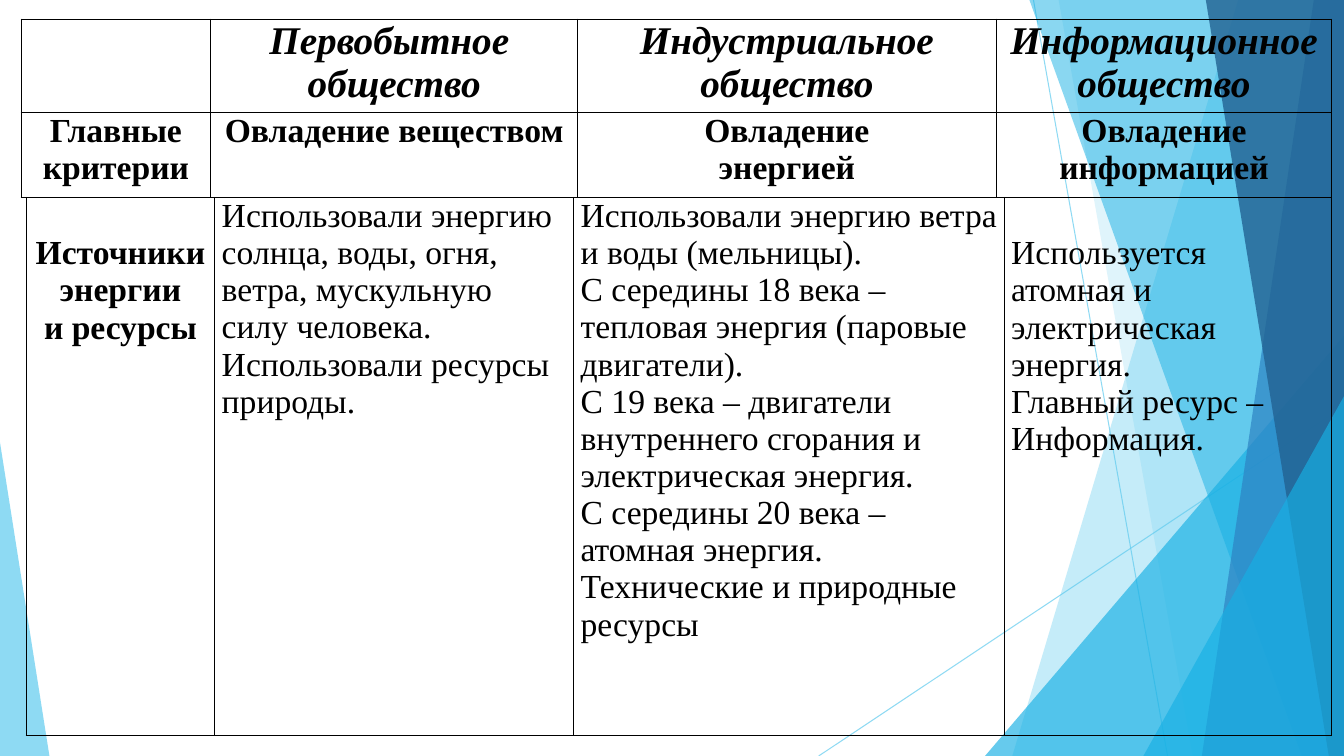
from lxml.etree import SubElement
from pptx import Presentation
from pptx.dml.color import RGBColor
from pptx.enum.shapes import MSO_CONNECTOR as Connector, MSO_SHAPE as Shape
from pptx.enum.text import PP_ALIGN as Align
from pptx.oxml.ns import qn
from pptx.util import Pt

PX = 9144
SLIDE_W, SLIDE_H = 1333, 750
FONT = "Times New Roman"
SKY, AZURE, BLUE, NAVY, BLACK = "5FCBEF", "17B0E4", "2E83C3", "226292", "000000"

SOCIETIES = [
    [],
    ["Первобытное ", "общество"],
    ["Индустриальное", "общество"],
    ["Информационное", "общество"],
]
CRITERIA = [
    ["Главные критерии"],
    ["Овладение веществом"],
    ["Овладение", "энергией"],
    ["Овладение", "информацией"],
]
RESOURCES_TITLE = ["Источники энергии", "и ресурсы"]
PRIMITIVE = [
    "Использовали энергию солнца, воды, огня, ветра, мускульную силу человека.",
    "Использовали ресурсы природы.",
]
INDUSTRIAL = [
    "Использовали энергию ветра и воды (мельницы).",
    "С середины 18 века – тепловая энергия (паровые двигатели).",
    "С 19 века – двигатели внутреннего сгорания и электрическая энергия.",
    "С середины 20 века – атомная энергия.",
    "Технические и природные ресурсы",
]
INFORMATION = [
    "Используется атомная и электрическая энергия.",
    "Главный ресурс –",
    "Информация.",
]
TEXT_LINE = 37


def px(length):
    return length * PX


def paint(color_format, color, opacity=100):
    color_format.rgb = RGBColor.from_string(color)
    if opacity < 100:
        clr = color_format._xFill.find(qn("a:srgbClr"))
        SubElement(clr, qn("a:alpha"), val=str(opacity * 1000))


def fill_facet(facet, color, opacity):
    facet.shadow.inherit = False
    facet.line.fill.background()
    facet.fill.solid()
    facet.fill.fore_color.rgb = RGBColor.from_string(color)
    clr = facet._element.spPr.find(qn("a:solidFill")).find(qn("a:srgbClr"))
    SubElement(clr, qn("a:alpha"), val=str(opacity * 1000))


def add_ray(slide, x1, y1, x2, y2):
    ray = slide.shapes.add_connector(
        Connector.STRAIGHT, px(x1), px(y1), px(x2), px(y2))
    ray.line.width = Pt(0.75)
    ray.line.color.rgb = RGBColor.from_string(SKY)
    props = ray._element.spPr
    clr = next(props.iter(qn("a:srgbClr")))
    SubElement(clr, qn("a:alpha"), val="70000")
    SubElement(props, qn("a:effectLst"))


def add_band(slide, top_x, bottom_x, color, opacity):
    outline = slide.shapes.build_freeform(top_x, 0, scale=PX)
    outline.add_line_segments(
        [(SLIDE_W, 0), (SLIDE_W, SLIDE_H), (bottom_x, SLIDE_H)], close=True)
    fill_facet(outline.convert_to_shape(), color, opacity)


def add_corner(slide, x, y, width, apex, color, opacity):
    corner = slide.shapes.add_shape(
        Shape.ISOSCELES_TRIANGLE, px(x), px(y), px(width), px(SLIDE_H - y))
    corner.adjustments[0] = apex
    fill_facet(corner, color, opacity)


def add_grid(slide, x, y, widths, heights):
    grid = slide.shapes.add_table(
        len(heights), len(widths), px(x), px(y),
        px(sum(widths)), px(sum(heights))).table
    grid.first_row = grid.horz_banding = False
    for column, width in zip(grid.columns, widths):
        column.width = px(width)
    for row, height in zip(grid.rows, heights):
        row.height = px(height)
    for cell in grid.iter_cells():
        cell.margin_left = cell.margin_right = px(7)
        cell.margin_top = cell.margin_bottom = 0
        props = cell._tc.get_or_add_tcPr()
        for side in ("lnL", "lnR", "lnT", "lnB"):
            border = SubElement(props, qn(f"a:{side}"), w=str(Pt(1)))
            stroke = SubElement(border, qn("a:solidFill"))
            SubElement(stroke, qn("a:srgbClr"), val=BLACK)
        cell.fill.background()
    return grid


def write(cell, lines, size=24, bold=False, italic=False, align=Align.LEFT):
    frame = cell.text_frame
    for index, line in enumerate(lines):
        paragraph = frame.add_paragraph() if index else frame.paragraphs[0]
        paragraph.text = line
        paragraph.alignment = align
        font = paragraph.font
        font.name, font.size = FONT, Pt(size)
        font.bold, font.italic = bold, italic
        font.color.rgb = RGBColor.from_string(BLACK)


def add_backdrop(slide):
    add_ray(slide, 1025, 0, 1158, 750)
    add_ray(slide, 1333, 403, 812, 750)
    add_band(slide, 1228, 1004, SKY, 36)
    add_band(slide, 1050, 1183, SKY, 20)
    add_corner(slide, 977, 333, 356, 1, AZURE, 66)
    add_band(slide, 1021, 1291, AZURE, 50)
    add_band(slide, 1303, 1192, BLUE, 70)
    add_band(slide, 1196, 1318, NAVY, 80)
    add_corner(slide, 1134, 393, 199, 1, AZURE, 66)
    add_corner(slide, 0, 439, 49, 0, SKY, 70)


def main():
    deck = Presentation()
    deck.slide_width, deck.slide_height = px(SLIDE_W), px(SLIDE_H)
    slide = deck.slides.add_slide(deck.slide_layouts[6])
    add_backdrop(slide)

    criteria = add_grid(slide, 21, 19, [188, 364, 415, 333], [93, 84])
    for column, (society, criterion) in enumerate(zip(SOCIETIES, CRITERIA)):
        write(criteria.cell(0, column), society, 28, True, True, Align.CENTER)
        write(criteria.cell(1, column), criterion, bold=True, align=Align.CENTER)

    resources = add_grid(slide, 26, 196, [187, 356, 427, 325], [534])
    write(resources.cell(0, 0), RESOURCES_TITLE, bold=True, align=Align.CENTER)
    for column, lines in enumerate([PRIMITIVE, INDUSTRIAL, INFORMATION], 1):
        write(resources.cell(0, column), lines)
    for column in (0, 3):
        resources.cell(0, column).margin_top = px(TEXT_LINE)

    deck.save("out.pptx")


if __name__ == "__main__":
    main()
